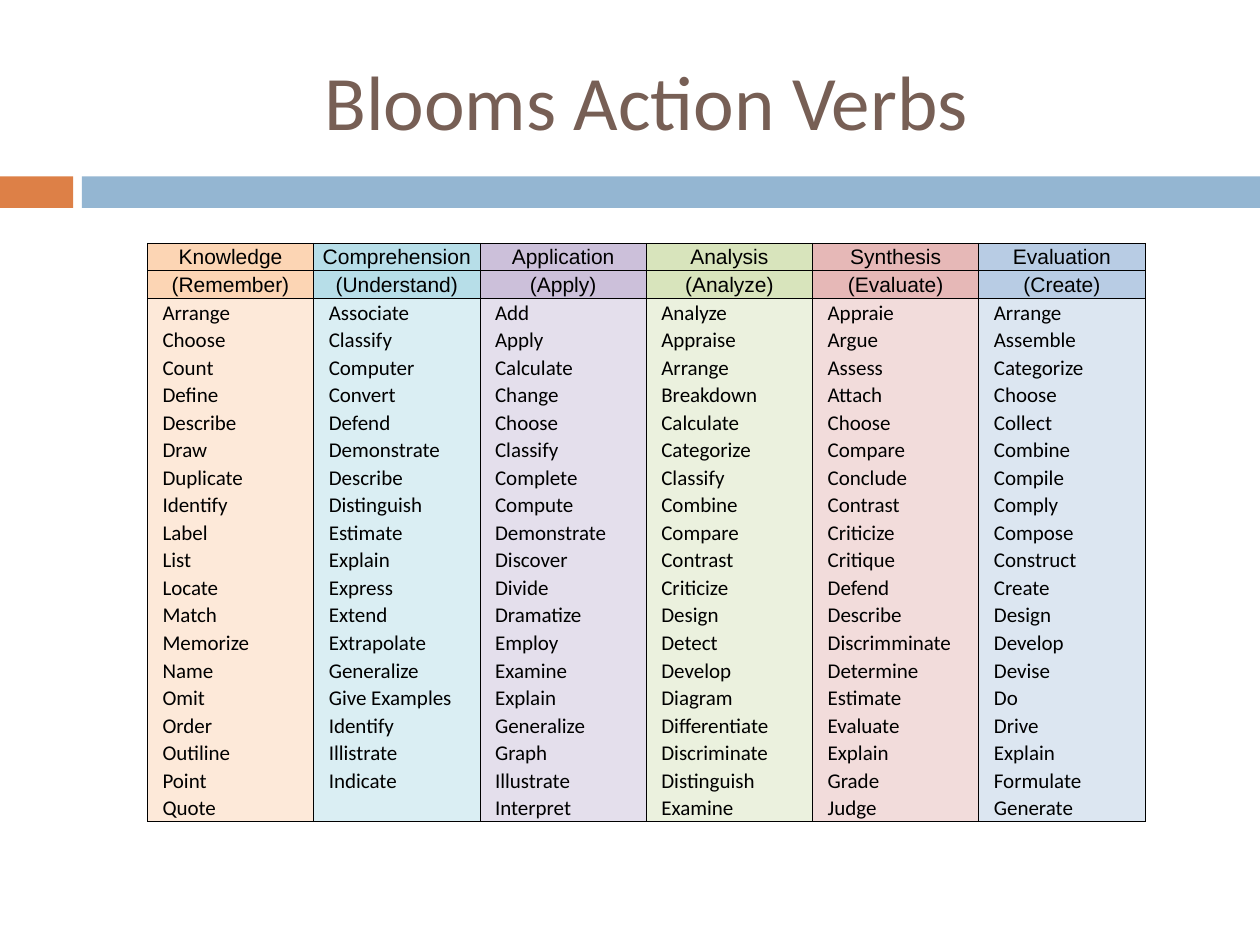
"""Build a slide with a table of Bloom's action verbs by level."""
from lxml import etree
from pptx import Presentation, util as u
from pptx.dml.color import RGBColor
from pptx.enum import shapes, text
from pptx.oxml.ns import qn

TITLE = "Blooms Action Verbs"
COLORS = {"title": "775F55", "orange": "DD8047", "blue": "94B6D2", "black": "000000"}
LEVELS = [
    ("Knowledge", "(Remember)", "FCD5B4", "FDE9D9",
     "Arrange, Choose, Count, Define, Describe, Draw, Duplicate, Identify, Label, List, "
     "Locate, Match, Memorize, Name, Omit, Order, Outiline, Point, Quote"),
    ("Comprehension", "(Understand)", "B7DEE8", "DAEEF3",
     "Associate, Classify, Computer, Convert, Defend, Demonstrate, Describe, Distinguish, "
     "Estimate, Explain, Express, Extend, Extrapolate, Generalize, Give Examples, Identify, "
     "Illistrate, Indicate"),
    ("Application", "(Apply)", "CCC0DA", "E4DFEC",
     "Add, Apply, Calculate, Change, Choose, Classify, Complete, Compute, Demonstrate, "
     "Discover, Divide, Dramatize, Employ, Examine, Explain, Generalize, Graph, Illustrate, "
     "Interpret"),
    ("Analysis", "(Analyze)", "D8E4BC", "EBF1DE",
     "Analyze, Appraise, Arrange, Breakdown, Calculate, Categorize, Classify, Combine, "
     "Compare, Contrast, Criticize, Design, Detect, Develop, Diagram, Differentiate, "
     "Discriminate, Distinguish, Examine"),
    ("Synthesis", "(Evaluate)", "E6B8B7", "F2DCDB",
     "Appraie, Argue, Assess, Attach, Choose, Compare, Conclude, Contrast, Criticize, "
     "Critique, Defend, Describe, Discrimminate, Determine, Estimate, Evaluate, Explain, "
     "Grade, Judge"),
    ("Evaluation", "(Create)", "B8CCE4", "DCE6F1",
     "Arrange, Assemble, Categorize, Choose, Collect, Combine, Compile, Comply, Compose, "
     "Construct, Create, Design, Develop, Devise, Do, Drive, Explain, Formulate, Generate"),
]
HEADER_ROWS = 2
BARS = [(0, 0.58, "orange"), (0.65, 9.35, "blue")]
BAR_TOP, BAR_HEIGHT = 1.4, 0.25
TABLE_BOX = (1.17, 1.93, 7.92, 4.59)


def inches(*lengths):
    """Convert lengths in inches to slide units."""
    return [u.Inches(n) for n in lengths]


def write(tf, words, size=12, font="Calibri", color="black", align=text.PP_ALIGN.LEFT):
    """Put one formatted paragraph into a text frame."""
    p = tf.paragraphs[0]
    p.alignment = align
    if not words:
        etree.SubElement(p._p, qn("a:endParaRPr"), sz=str(size * 100))
        return
    r = p.add_run()
    r.text = words
    r.font.size, r.font.name = u.Pt(size), font
    r.font.color.rgb = RGBColor.from_string(COLORS[color])


def set_borders(cell, sides):
    """Draw thin black lines on the given sides and none on the others."""
    tc_pr = cell._tc.get_or_add_tcPr()
    for i, side in enumerate("LRTB"):
        line = etree.Element(qn(f"a:ln{side}"), w=str(u.Pt(0.5)))
        if side in sides:
            fill = etree.SubElement(line, qn("a:solidFill"))
            etree.SubElement(fill, qn("a:srgbClr"), val=COLORS["black"])
        else:
            etree.SubElement(line, qn("a:noFill"))
        tc_pr.insert(i, line)


def fill_cell(cell, words, fill, sides, header):
    """Format one table cell as a header or a verb."""
    cell.fill.solid()
    cell.fill.fore_color.rgb = RGBColor.from_string(fill)
    cell.margin_left = u.Inches(0.01 if header else 0.12)
    cell.margin_right = cell.margin_top = u.Inches(0.01)
    cell.margin_bottom = 0
    cell.vertical_anchor = text.MSO_ANCHOR.MIDDLE if header else text.MSO_ANCHOR.BOTTOM
    style = {"font": "Arial", "align": text.PP_ALIGN.CENTER} if header else {}
    write(cell.text_frame, words, **style)
    set_borders(cell, sides)


def add_verb_table(s):
    """Add the table with one column per level."""
    verbs = [level[-1].split(", ") for level in LEVELS]
    n_rows = HEADER_ROWS + max(map(len, verbs))
    table = s.shapes.add_table(n_rows, len(LEVELS), *inches(*TABLE_BOX)).table
    table.first_row = table.horz_banding = False
    for row in table.rows:
        row.height = u.Inches(TABLE_BOX[3] / n_rows)
    for col, (name, action, dark, light, _) in enumerate(LEVELS):
        words = [name, action] + verbs[col]
        words += [""] * (n_rows - len(words))
        for row, word in enumerate(words):
            header = row < HEADER_ROWS
            top = "T" if row <= HEADER_ROWS else ""
            bottom = "B" if header or row == n_rows - 1 else ""
            fill_cell(table.cell(row, col), word, dark if header else light,
                      "LR" + top + bottom, header)


def main():
    prs = Presentation()
    prs.slide_width, prs.slide_height = inches(10, 7.5)
    s = prs.slides.add_slide(prs.slide_layouts[5])
    for left, width, color in BARS:
        bar = s.shapes.add_shape(shapes.MSO_SHAPE.RECTANGLE,
                                 *inches(left, BAR_TOP, width, BAR_HEIGHT))
        bar.shadow.inherit = False
        bar.fill.solid()
        bar.fill.fore_color.rgb = RGBColor.from_string(COLORS[color])
        bar.line.fill.background()
    title = s.shapes.title
    title.left, title.top, title.width, title.height = inches(0.67, 0.25, 8.92, 1.08)
    title.text_frame.vertical_anchor = text.MSO_ANCHOR.MIDDLE
    write(title.text_frame, TITLE, size=44, color="title", align=text.PP_ALIGN.CENTER)
    add_verb_table(s)
    prs.save("out.pptx")


if __name__ == "__main__":
    main()
